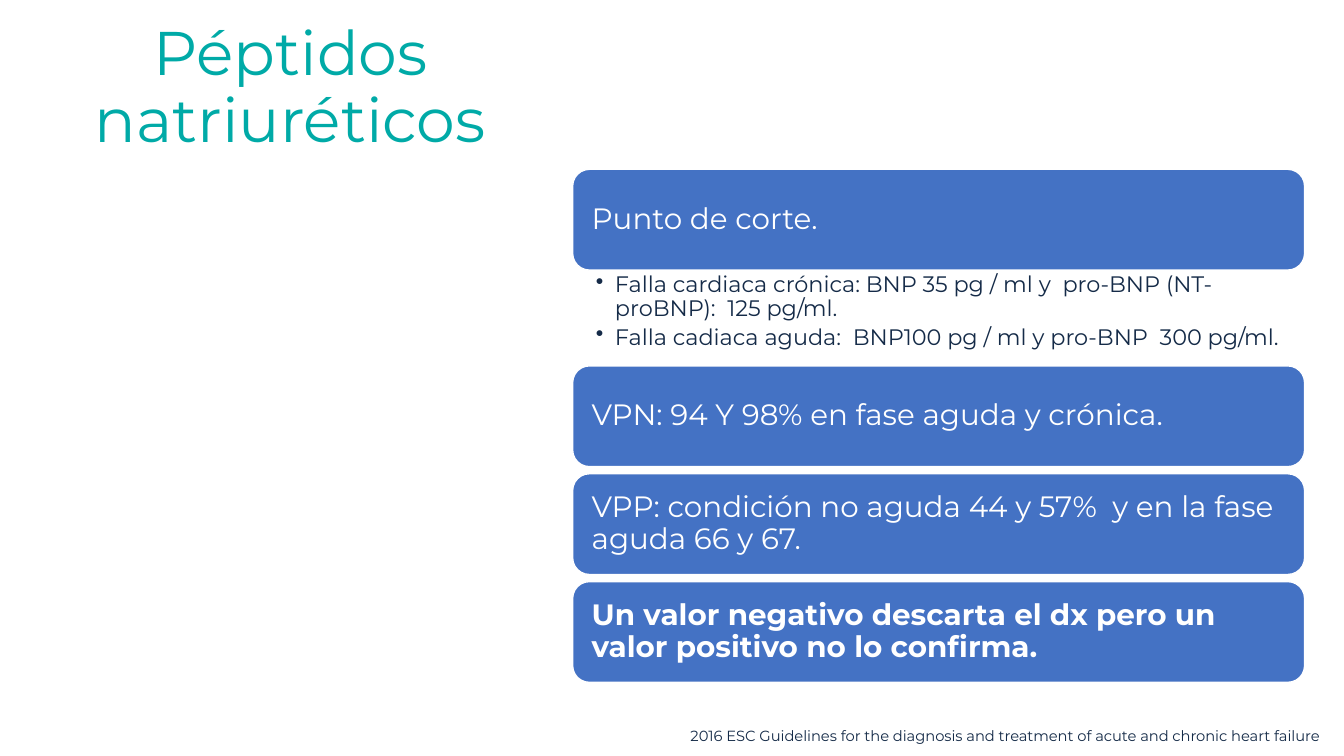
from lxml import etree
from pptx import Presentation
from pptx.dml.color import RGBColor
from pptx.enum import shapes, text
from pptx.oxml import ns
from pptx.util import Inches, Pt

FONT = "Montserrat"
COLORS = {"title": "00AAA7", "card": "4472C4", "white": "FFFFFF", "body": "152B48"}

CARD_H, CARD_STEP = 1, 1.07
DETAILS_H = 0.95
CUTOFF = "Punto de corte."
CUTOFF_DETAILS = [
    "Falla cardiaca crónica: BNP 35 pg / ml y  pro-BNP (NT-proBNP):  125 pg/ml.",
    "Falla cadiaca aguda:  BNP100 pg / ml y pro-BNP  300 pg/ml.",
]
# Text and whether it is bold
FINDINGS = [
    ("VPN: 94 Y 98% en fase aguda y crónica.", False),
    ("VPP: condición no aguda 44 y 57%  y en la fase aguda 66 y 67.", False),
    ("Un valor negativo descarta el dx pero un valor positivo no lo confirma.", True),
]


def rgb(name):
    return RGBColor.from_string(COLORS[name])


def add_bullet(p, indent):
    pPr = p._p.get_or_add_pPr()
    pPr.set("marL", str(Inches(indent)))
    pPr.set("indent", str(-Inches(indent)))
    etree.SubElement(pPr, ns.qn("a:buChar"), char="•")


def write(sp, lines, size, color, bold=False, align=text.PP_ALIGN.LEFT,
          anchor=text.MSO_ANCHOR.TOP, insets=(0.1, 0.05, 0.1, 0.05),
          line_spacing=0.9, after=0, bullet_indent=None):
    """Fill a shape with one paragraph per line; insets are left, top, right, bottom."""
    tf = sp.text_frame
    tf.word_wrap = True
    tf.vertical_anchor = anchor
    tf.margin_left, tf.margin_top, tf.margin_right, tf.margin_bottom = map(Inches, insets)
    for i, line in enumerate(lines):
        p = tf.add_paragraph() if i else tf.paragraphs[0]
        if bullet_indent:
            p.level = 1
            add_bullet(p, bullet_indent)
        p.alignment = align
        p.line_spacing = line_spacing
        p.space_after = Pt(after)
        r = p.add_run()
        r.text = line
        r.font.name, r.font.size, r.font.bold = FONT, Pt(size), bold
        r.font.color.rgb = rgb(color)


def add_text(s, box, lines, size, color, **fmt):
    sp = s.shapes.add_textbox(*map(Inches, box))
    write(sp, lines, size, color, **fmt)


def add_card(s, box, line, bold=False):
    sp = s.shapes.add_shape(shapes.MSO_SHAPE.ROUNDED_RECTANGLE, *map(Inches, box))
    sp.shadow.inherit = False
    sp.fill.solid()
    sp.fill.fore_color.rgb = rgb("card")
    sp.line.color.rgb = rgb("white")
    sp.line.width = Pt(1)
    write(sp, [line], 21, "white", bold=bold, anchor=text.MSO_ANCHOR.MIDDLE,
          insets=(0.14, 0.1, 0.14, 0.1))


def add_title(s, box):
    add_text(s, box, ["Péptidos natriuréticos"], 44, "title",
             align=text.PP_ALIGN.CENTER, anchor=text.MSO_ANCHOR.MIDDLE)


def add_findings(s, left, top, width):
    # Cut-off card with its bulleted details
    add_card(s, (left, top, width, CARD_H), CUTOFF)
    top += CARD_H
    add_text(s, (left, top, width, DETAILS_H), CUTOFF_DETAILS, 16, "body",
             insets=(0.23, 0.03, 0.16, 0.03), after=3, bullet_indent=0.19)
    # Evenly stepped cards
    top += DETAILS_H
    for i, (line, bold) in enumerate(FINDINGS):
        add_card(s, (left, top + i * CARD_STEP, width, CARD_H), line, bold)


def add_source(s, box):
    add_text(s, box, ["2016 ESC Guidelines for the diagnosis and treatment "
                      "of acute and chronic heart failure"],
             10.5, "body", line_spacing=1.0)


def main():
    prs = Presentation()
    prs.slide_width, prs.slide_height = Inches(13.33), Inches(7.5)
    s = prs.slides.add_slide(prs.slide_layouts[6])
    add_title(s, (0.39, 0.16, 4.98, 1.45))
    add_findings(s, 5.68, 1.68, 7.26)
    add_source(s, (6.75, 7.16, 6.58, 0.29))
    prs.save("out.pptx")


if __name__ == "__main__":
    main()
